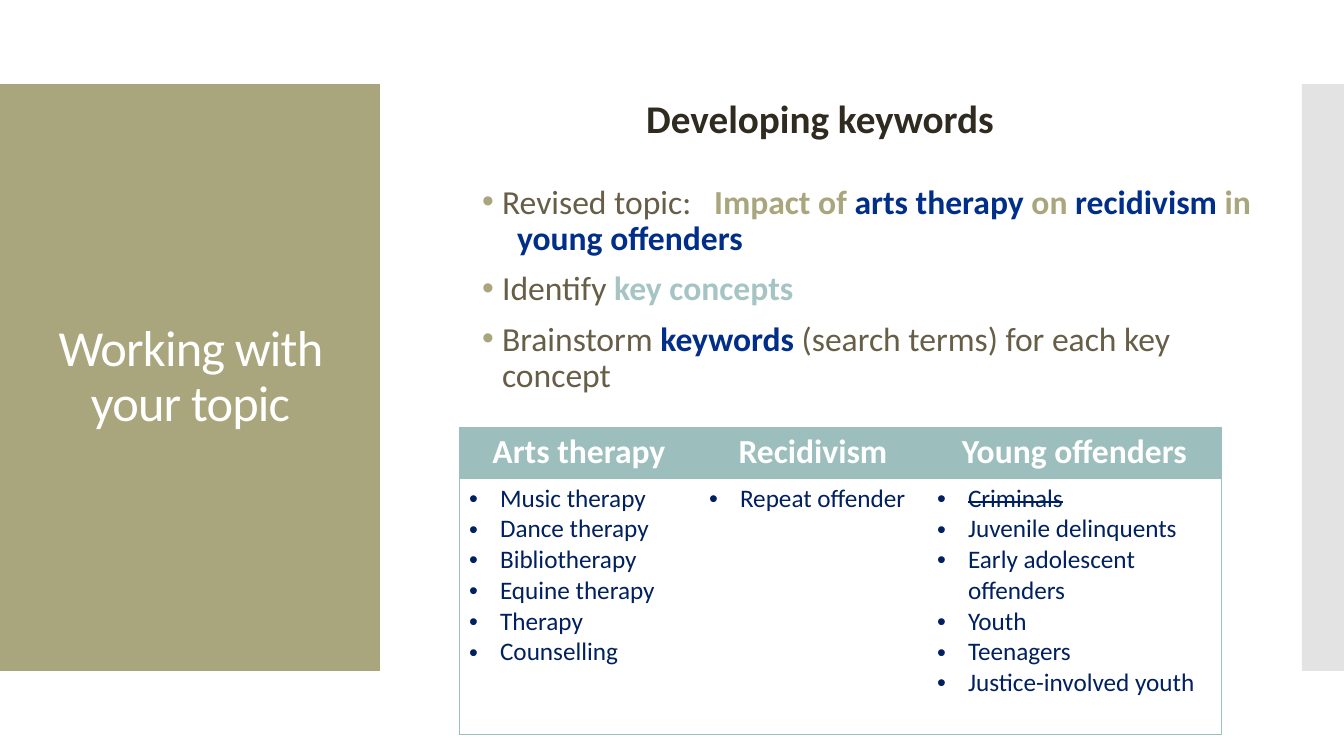
import pptx
import pptx.util
import pptx.dml.color
import pptx.enum.shapes
import pptx.enum.text
import pptx.oxml.ns
import lxml.etree

PX = 9144000 / 1008
FONT = "Calibri"
COLORS = {
    "olive": "A9A57C", "grey": "C8C8C8", "white": "FFFFFF", "dark": "2F2B20",
    "brown": "675E47", "blue": "002E89", "mist": "A6C4C4", "teal": "9CBEBD",
    "navy": "002060",
}
TOPIC_POINTS = [
    (20, True, [("Revised topic:\t", "brown", False), ("Impact of ", "olive", True),
                ("arts therapy ", "blue", True), ("on ", "olive", True),
                ("recidivism", "blue", True), (" in", "olive", True)]),
    (35, False, [("young offenders", "blue", True)]),
    (20, True, [("Identify ", "brown", False), ("key concepts", "mist", True)]),
    (20, True, [("Brainstorm ", "brown", False), ("keywords ", "blue", True),
                ("(search terms) for each key concept", "brown", False)]),
]
KEYWORDS = {
    "Arts therapy": ["Music therapy", "Dance therapy", "Bibliotherapy",
                     "Equine therapy", "Therapy", "Counselling"],
    "Recidivism": ["Repeat offender"],
    "Young offenders": ["Criminals", "Juvenile delinquents",
                        "Early adolescent offenders", "Youth", "Teenagers",
                        "Justice-involved youth"],
}
REJECTED = {"Criminals"}


def px(length):
    """Turn pixels into EMU."""
    return pptx.util.Emu(round(length * PX))


def rgb(color):
    """Look up a named colour."""
    return pptx.dml.color.RGBColor.from_string(COLORS[color])


def child(parent, tag, **attributes):
    """Append a DrawingML element."""
    element = lxml.etree.SubElement(parent, pptx.oxml.ns.qn("a:" + tag))
    for key, value in attributes.items():
        element.set(key, str(value))
    return element


def indent(paragraph, left, bullet=False, color=None, tab=None):
    """Set the left margin, bullet and tab stop of a paragraph."""
    properties = paragraph._p.get_or_add_pPr()
    properties.set("marL", str(px(left)))
    properties.set("indent", str(px(-left if bullet else 0)))
    if bullet:
        if color:
            child(child(properties, "buClr"), "srgbClr", val=COLORS[color])
        child(properties, "buFont", typeface="Arial")
        child(properties, "buChar", char="•")
    else:
        child(properties, "buNone")
    if tab:
        child(child(properties, "tabLst"), "tab", pos=px(tab), algn="l")


def add_run(paragraph, text, size, color, bold=False):
    """Add one formatted run."""
    run = paragraph.add_run()
    run.text = text
    run.font.name = FONT
    run.font.size = pptx.util.Pt(size)
    run.font.bold = bold
    run.font.color.rgb = rgb(color)
    return run


def place(placeholder, box, anchor):
    """Move a placeholder to its box and return its text frame."""
    placeholder.left, placeholder.top, placeholder.width, placeholder.height = map(px, box)
    frame = placeholder.text_frame
    frame.word_wrap = True
    frame.auto_size = pptx.enum.text.MSO_AUTO_SIZE.NONE
    frame.vertical_anchor = anchor
    return frame


def add_band(slide, box, color, alpha=None):
    """Draw a plain band behind the text."""
    band = slide.shapes.add_shape(pptx.enum.shapes.MSO_SHAPE.RECTANGLE, *map(px, box))
    band.shadow.inherit = False
    band.fill.solid()
    band.fill.fore_color.rgb = rgb(color)
    band.line.fill.background()
    if alpha:
        fill_color = band.element.spPr.find(".//" + pptx.oxml.ns.qn("a:srgbClr"))
        child(fill_color, "alpha", val=alpha * 1000)
    band.element.getparent().insert(2, band.element)


def add_title_panel(slide, box):
    """Fill the left panel and centre the slide title in it."""
    left, top, width, height = box
    add_band(slide, box, "olive")
    frame = place(slide.shapes.title, (left + 28, top + 40, width - 55, height - 80),
                  pptx.enum.text.MSO_ANCHOR.MIDDLE)
    title = frame.paragraphs[0]
    title.alignment = pptx.enum.text.PP_ALIGN.CENTER
    title.line_spacing = 0.9
    run = add_run(title, "Working with your topic", 36, "white")
    run.font._element.set("spc", "-60")


def add_heading(slide, box):
    """Write the heading above the list."""
    frame = place(slide.placeholders[1], box, pptx.enum.text.MSO_ANCHOR.TOP)
    heading = frame.paragraphs[0]
    indent(heading, 0)
    heading.alignment = pptx.enum.text.PP_ALIGN.CENTER
    heading.line_spacing = 0.9
    heading.space_before = pptx.util.Pt(0)
    add_run(heading, "Developing keywords", 28, "dark", True)


def add_topic_list(slide, box):
    """Write the bulleted steps."""
    frame = place(slide.placeholders[2], box, pptx.enum.text.MSO_ANCHOR.MIDDLE)
    for index, (left, bullet, runs) in enumerate(TOPIC_POINTS):
        point = frame.add_paragraph() if index else frame.paragraphs[0]
        indent(point, left, bullet, "olive", None if index else 232)
        point.line_spacing = 0.9
        point.space_before = pptx.util.Pt(10 if index and bullet else 0)
        for text, color, bold in runs:
            add_run(point, text, 24, color, bold)


def set_borders(cell, visible):
    """Draw the named sides of a cell and hide the others."""
    properties = cell._tc.get_or_add_tcPr()
    for side in "LRTB":
        line = child(properties, "ln" + side, w=pptx.util.Pt(0.75))
        if side in visible:
            child(child(line, "solidFill"), "srgbClr", val=COLORS["teal"])
        else:
            child(line, "noFill")


def add_keyword_table(slide, box):
    """Tabulate the keywords under each key concept."""
    left, top, width, height = box
    table = slide.shapes.add_table(2, len(KEYWORDS), *map(px, box)).table
    table.horz_banding = False
    header_height = 51
    table.rows[0].height = px(header_height)
    table.rows[1].height = px(height - header_height)
    shares = (240, 228, 295)
    for column, (concept, keywords) in enumerate(KEYWORDS.items()):
        table.columns[column].width = px(width * shares[column] / sum(shares))
        sides = "TB" + {0: "L", len(KEYWORDS) - 1: "R"}.get(column, "")
        header, body = table.cell(0, column), table.cell(1, column)
        set_borders(header, sides)
        set_borders(body, sides)
        header.fill.solid()
        header.fill.fore_color.rgb = rgb("teal")
        body.fill.background()
        label = header.text_frame.paragraphs[0]
        label.alignment = pptx.enum.text.PP_ALIGN.CENTER
        add_run(label, concept, 24, "white", True)
        for index, keyword in enumerate(keywords):
            frame = body.text_frame
            entry = frame.add_paragraph() if index else frame.paragraphs[0]
            indent(entry, 31, True)
            run = add_run(entry, keyword, 18, "navy")
            if keyword in REJECTED:
                run.font._element.set("strike", "sngStrike")


def main():
    """Build and save the slide."""
    deck = pptx.Presentation()
    deck.slide_width, deck.slide_height = px(1344), px(756)
    slide = deck.slides.add_slide(deck.slide_layouts.get_by_name("Two Content"))
    add_title_panel(slide, (0, 84, 380, 587))
    add_band(slide, (1302, 84, 42, 587), "grey", 50)
    add_heading(slide, (540, 95, 560, 59))
    add_topic_list(slide, (472, 181, 819, 218))
    add_keyword_table(slide, (459, 427, 763, 307))
    deck.save("out.pptx")


if __name__ == "__main__":
    main()
